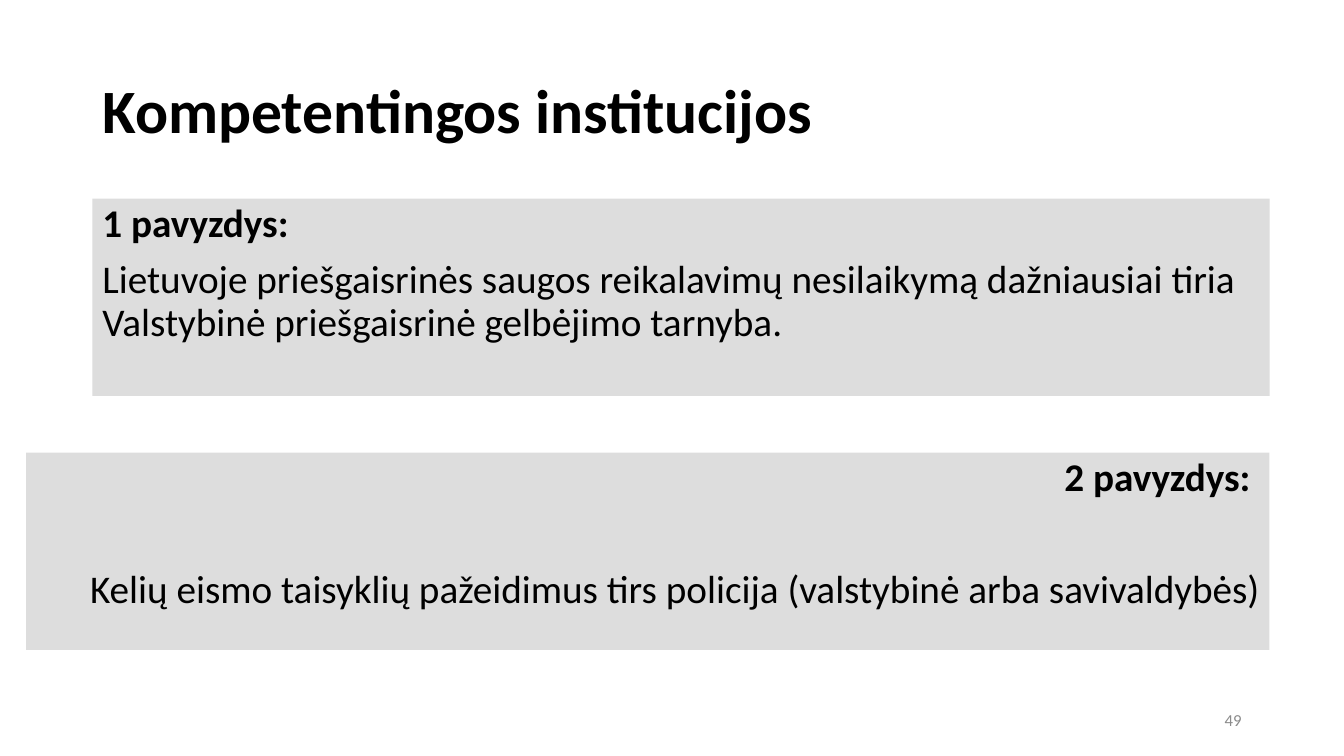
from dataclasses import dataclass

from lxml import etree
from pptx import Presentation
from pptx import util as u
from pptx.dml.color import RGBColor
from pptx.enum import text
from pptx.oxml import ns


@dataclass(frozen=True)
class Theme:
    font: str = "Calibri"
    ink: str = "000000"
    panel: str = "DDDDDD"
    muted: str = "8B8B8B"
    title_size: int = 44
    body_size: int = 28
    number_size: int = 12


THEME = Theme()
LEFT, RIGHT = text.PP_ALIGN.LEFT, text.PP_ALIGN.RIGHT
TOP, MIDDLE = text.MSO_ANCHOR.TOP, text.MSO_ANCHOR.MIDDLE


def place(part, box, anchor):
    part.left, part.top, part.width, part.height = (u.Pt(length) for length in box)
    frame = part.text_frame
    frame.word_wrap = True
    frame.auto_size = text.MSO_AUTO_SIZE.NONE
    frame.vertical_anchor = anchor
    frame.margin_left = frame.margin_right = u.Pt(7.2)
    frame.margin_top = frame.margin_bottom = u.Pt(3.6)
    return frame


def write(paragraph, words, size, color, align, bold=False, before=0, spacing=0.9):
    paragraph.alignment = align
    paragraph.line_spacing = spacing
    paragraph.space_before = u.Pt(before)
    run = paragraph.add_run()
    run.text = words
    run.font.name = THEME.font
    run.font.size = u.Pt(size)
    run.font.bold = bold
    run.font.color.rgb = RGBColor.from_string(color)


def remove_bullet(paragraph):
    properties = paragraph._p.get_or_add_pPr()
    properties.set("marL", "0")
    properties.set("indent", "0")
    etree.SubElement(properties, ns.qn("a:buNone"))


def heading(title, box, words):
    frame = place(title, box, MIDDLE)
    write(frame.paragraphs[0], words, THEME.title_size, THEME.ink, LEFT, bold=True)


def example_panel(body, box, label, statement, align, gap):
    frame = place(body, box, TOP)
    body.fill.solid()
    body.fill.fore_color.rgb = RGBColor.from_string(THEME.panel)
    label_line, statement_line = frame.paragraphs[0], frame.add_paragraph()
    write(label_line, label, THEME.body_size, THEME.ink, align, bold=True, before=10)
    write(statement_line, statement, THEME.body_size, THEME.ink, align, before=gap)
    for line in (label_line, statement_line):
        remove_bullet(line)


def page_number(slide, box, number):
    frame = place(slide.shapes.add_textbox(0, 0, 0, 0), box, MIDDLE)
    write(frame.paragraphs[0], number, THEME.number_size, THEME.muted, RIGHT, spacing=1.0)


def institutions_slide(deck):
    slide = deck.slides.add_slide(deck.slide_layouts[3])
    title, first_example, second_example = slide.placeholders
    heading(title, (66, 28.8, 828, 104), "Kompetentingos institucijos")
    example_panel(
        first_example, (66, 141.8, 841, 141), "1 pavyzdys:",
        "Lietuvoje priešgaisrinės saugos reikalavimų nesilaikymą dažniausiai tiria "
        "Valstybinė priešgaisrinė gelbėjimo tarnyba.",
        LEFT, gap=10)
    example_panel(
        second_example, (18.7, 323.3, 888, 141), "2 pavyzdys: ",
        "Kelių eismo taisyklių pažeidimus tirs policija (valstybinė arba savivaldybės)",
        RIGHT, gap=50)
    page_number(slide, (678, 500.5, 216, 28), "49")


def main():
    deck = Presentation()
    deck.slide_width, deck.slide_height = u.Pt(960), u.Pt(540)
    institutions_slide(deck)
    deck.save("out.pptx")


if __name__ == "__main__":
    main()
